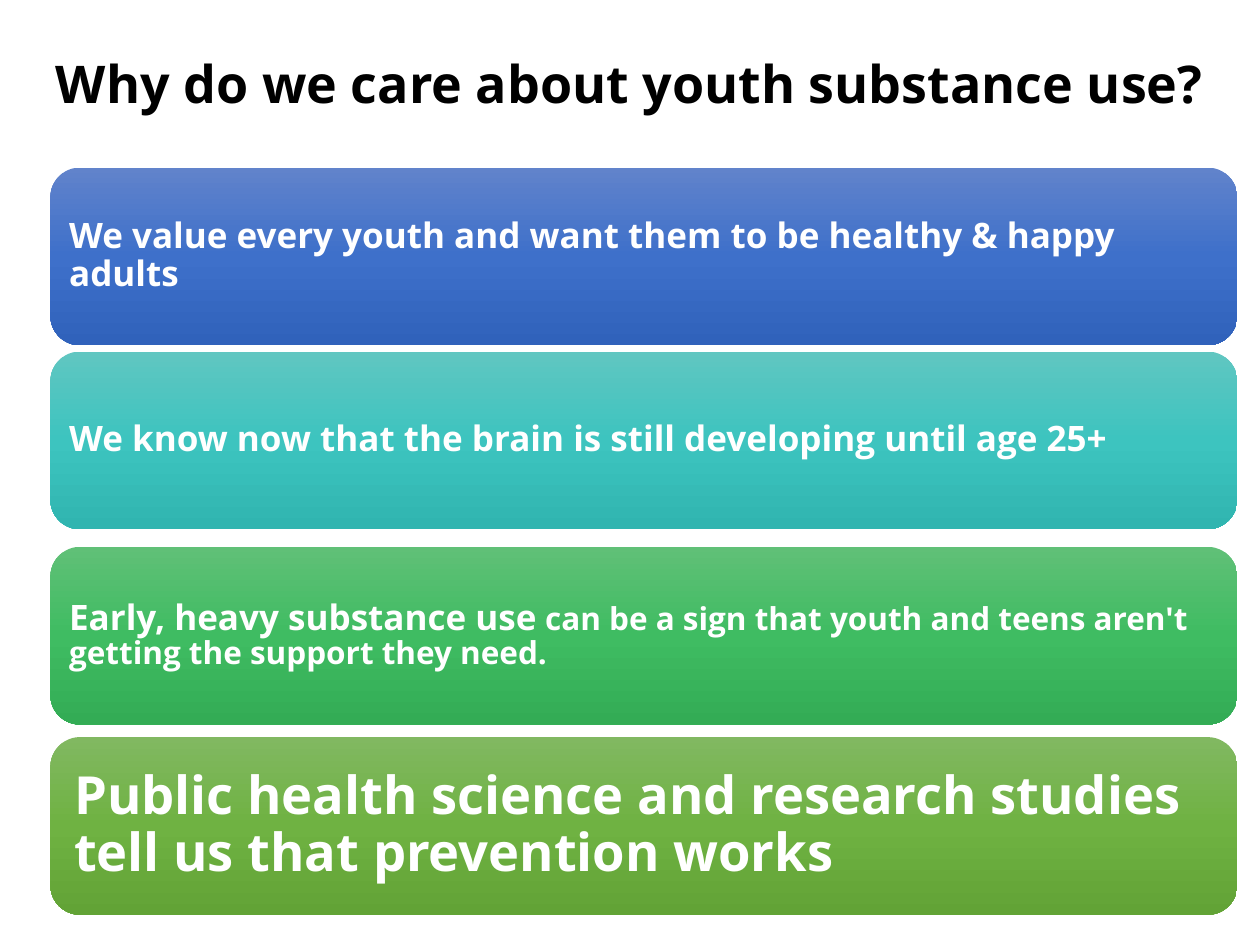
from copy import deepcopy
from dataclasses import dataclass

from pptx import Presentation
from pptx.dml.color import RGBColor as RGB
from pptx.enum.shapes import MSO_SHAPE as SHAPE
from pptx.enum.text import MSO_ANCHOR as ANCHOR, MSO_AUTO_SIZE as AUTO, PP_ALIGN as ALIGN
from pptx.util import Inches, Pt


@dataclass(frozen=True)
class Theme:
    font: str = "Open Sans"
    dark: str = "000000"
    light: str = "FFFFFF"
    blue: tuple = ("6183CB", "3E70CA", "3062BB")
    teal: tuple = ("60C6C1", "3DC4BF", "30B5B0")
    green: tuple = ("60C077", "3FBC62", "33AC55")
    lime: tuple = ("81B861", "6FB242", "62A336")
    title: float = 29.7
    large: float = 30
    body: float = 20
    small: float = 18


class Deck:
    def __init__(self, theme):
        self.theme = theme
        self.prs = Presentation()
        self.prs.slide_width, self.prs.slide_height = Inches(10), Inches(7.5)
        self.s = self.prs.slides.add_slide(self.prs.slide_layouts[5])

    def text(self, sp, runs, color, align, inset=None):
        tf = sp.text_frame
        tf.word_wrap = True
        tf.auto_size = AUTO.NONE
        tf.vertical_anchor = ANCHOR.MIDDLE
        if inset is not None:
            tf.margin_left = tf.margin_right = Inches(inset)
            tf.margin_top = tf.margin_bottom = Inches(inset)
        p = tf.paragraphs[0]
        p.alignment = align
        p.line_spacing = 0.9
        for text, size in runs:
            r = p.add_run()
            r.text = text
            r.font.name = self.theme.font
            r.font.size = Pt(size)
            r.font.bold = True
            r.font.color.rgb = RGB.from_string(color)

    def title(self, text, x, y, w, h):
        sp = self.s.shapes.title
        sp.left, sp.top, sp.width, sp.height = map(Inches, (x, y, w, h))
        self.text(sp, [(text, self.theme.title)], self.theme.dark, ALIGN.CENTER)

    def gradient(self, sp, colors):
        sp.fill.gradient()
        sp.fill.gradient_angle = 270
        first = sp.fill._xPr.gradFill.gsLst[0]
        first.addnext(deepcopy(first))
        for i, (stop, color) in enumerate(zip(sp.fill.gradient_stops, colors)):
            stop.position = i / 2
            stop.color.rgb = RGB.from_string(color)

    def card(self, top, colors, runs, inset=0.08):
        sp = self.s.shapes.add_shape(
            SHAPE.ROUNDED_RECTANGLE, Inches(0.4), Inches(top), Inches(9.42), Inches(1.41))
        sp.shadow.inherit = False
        sp.line.fill.background()
        self.gradient(sp, colors)
        self.text(sp, runs, self.theme.light, ALIGN.LEFT, inset)


def main():
    t = Theme()
    deck = Deck(t)
    deck.title("Why do we care about youth substance use?", 0.25, 0.17, 9.5, 1.03)
    deck.card(1.33, t.blue, [
        ("We value every youth and want them to be healthy & happy adults", t.body)])
    deck.card(2.79, t.teal, [
        ("We know now that the brain is still developing until age 25+", t.body)])
    deck.card(4.34, t.green, [
        ("Early, heavy substance use", t.body),
        (" can be a sign that youth and teens aren't getting the support they need.", t.small)])
    deck.card(5.85, t.lime, [
        ("Public health science and research studies tell us that prevention works ", t.large)],
        inset=0.12)
    deck.prs.save("out.pptx")


if __name__ == "__main__":
    main()
